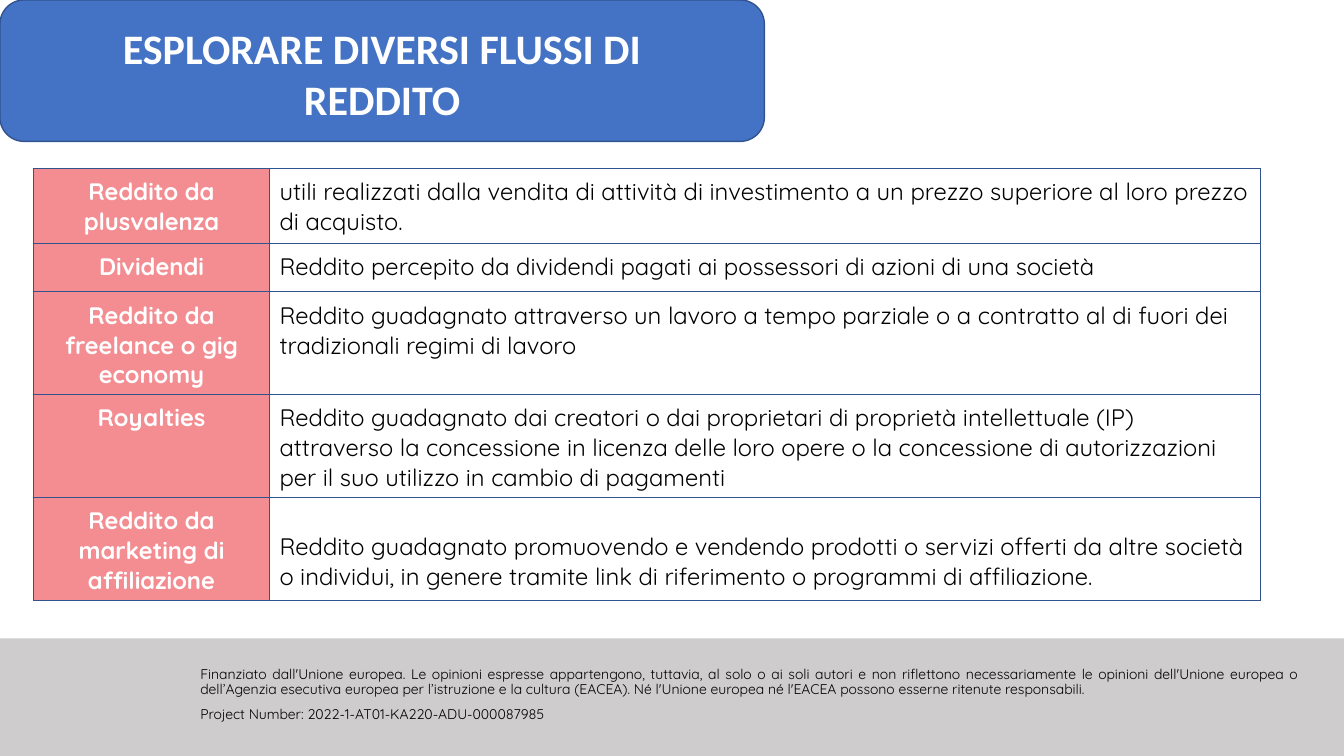
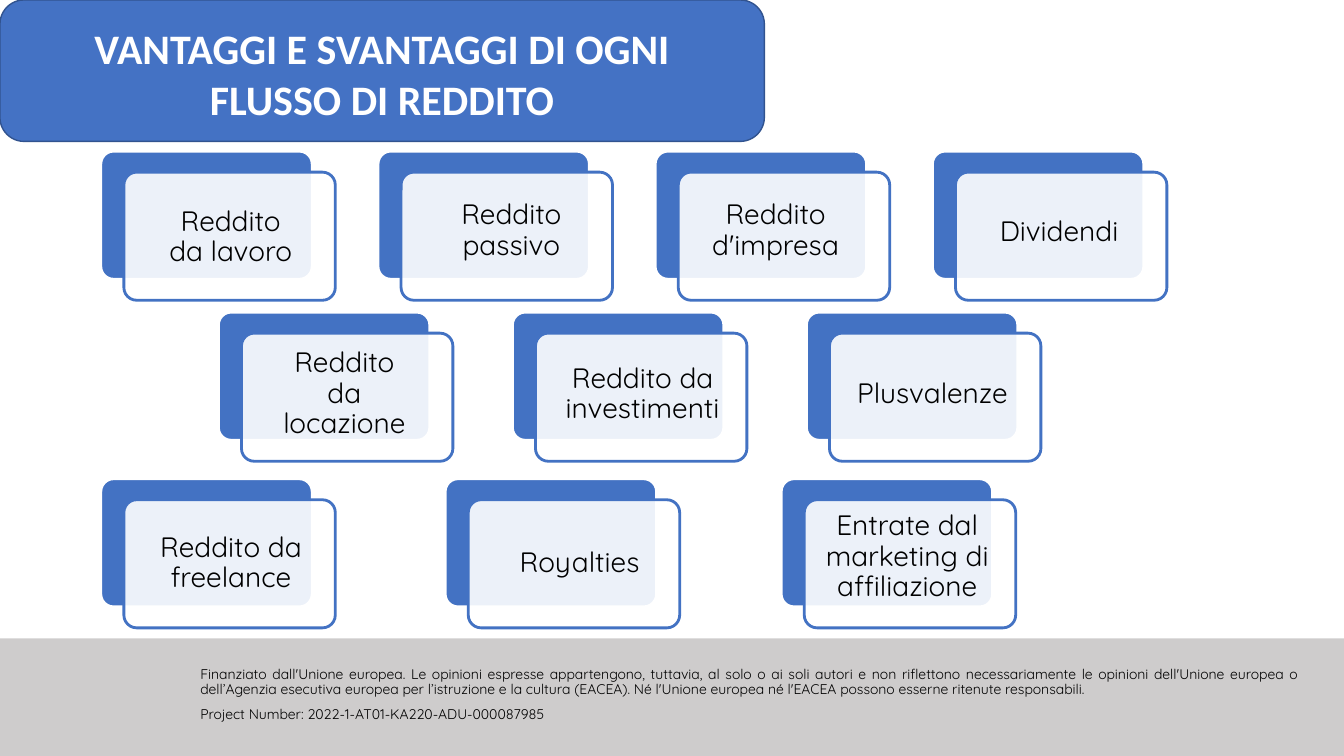
from dataclasses import dataclass

from lxml.etree import SubElement
from pptx import Presentation
from pptx.dml.color import RGBColor
from pptx.enum.shapes import MSO_SHAPE
from pptx.enum.text import MSO_ANCHOR, PP_ALIGN
from pptx.oxml.ns import qn
from pptx.util import Pt


@dataclass(frozen=True)
class Theme:
    banner: str = "4472C4"
    outline: str = "31538F"
    card: str = "4372C3"
    label: str = "F38D92"
    band: str = "AEABAB"
    white: str = "FFFFFF"
    black: str = "000000"
    title_font: str = "Calibri"
    body_font: str = "Quicksand"
    title_size: float = 30
    card_size: float = 20
    table_size: float = 17
    footer_size: float = 10


THEME = Theme()
SLIDE_WIDTH, SLIDE_HEIGHT = 960, 540
BANNER_BOX = (0, 0, 546, 101)
FOOTER_BOX = (0, 456, SLIDE_WIDTH, 84)
TABLE_BOX = (24, 120, 876.5, 316)
CARD_WIDTH, CARD_HEIGHT = 151, 91.5
CARD_SHIFT = (16.5, 15)

FOOTER_TEXTS = [
    "Finanziato dall'Unione europea. Le opinioni espresse appartengono, tuttavia, "
    "al solo o ai soli autori e non riflettono necessariamente le opinioni "
    "dell'Unione europea o dell’Agenzia esecutiva europea per l’istruzione e la "
    "cultura (EACEA). Né l'Unione europea né l'EACEA possono esserne ritenute "
    "responsabili.",
    "Project Number: 2022-1-AT01-KA220-ADU-000087985",
]

# Income type, description, row height
INCOME_ROWS = [
    ("Reddito da plusvalenza",
     "utili realizzati dalla vendita di attività di investimento a un prezzo "
     "superiore al loro prezzo di acquisto.", 54),
    ("Dividendi",
     "Reddito percepito da dividendi pagati ai possessori di azioni di una società",
     34.5),
    ("Reddito da freelance o gig economy",
     "Reddito guadagnato attraverso un lavoro a tempo parziale o a contratto al di "
     "fuori dei tradizionali regimi di lavoro", 73.5),
    ("Royalties",
     "Reddito guadagnato dai creatori o dai proprietari di proprietà intellettuale "
     "(IP) attraverso la concessione in licenza delle loro opere o la concessione "
     "di autorizzazioni per il suo utilizzo in cambio di pagamenti", 70),
    ("Reddito da marketing di affiliazione",
     "Reddito guadagnato promuovendo e vendendo prodotti o servizi offerti da altre "
     "società o individui, in genere tramite link di riferimento o programmi di "
     "affiliazione.", 73.5),
]

# Row top, card lefts, then each card's text and its box within the card
CARD_ROWS = [
    (108, [72, 270, 468, 666], [
        ("Reddito da lavoro", (42, 30, 101.5, 63)),
        ("Reddito passivo", (42, 24, 106.5, 66)),
        ("Reddito d'impresa", (30, 24, 112, 66)),
        ("Dividendi", (36, 24, 109, 68)),
    ]),
    (223, [156, 366, 576], [
        ("Reddito da locazione", (36, 30, 108, 57)),
        ("Reddito da investimenti", (30, 30, 126, 57)),
        ("Plusvalenze", (30, 30, 120, 57)),
    ]),
    (342, [72, 318, 558], [
        ("Reddito da freelance", (36, 36, 114, 49)),
        ("Royalties", (42, 36, 108, 49)),
        ("Entrate dal marketing di affiliazione", (24, 30, 132, 52)),
    ]),
]


def points(*lengths):
    return [Pt(length) for length in lengths]


def apply(target, formats):
    for name, value in formats.items():
        setattr(target, name, value)


def set_margins(target, left, top, right, bottom):
    names = ("margin_left", "margin_top", "margin_right", "margin_bottom")
    apply(target, dict(zip(names, points(left, top, right, bottom))))


def write(paragraph, text, size, color, font=THEME.body_font, bold=False, **formats):
    paragraph.text = text
    apply(paragraph, formats)
    apply(paragraph.font, {"name": font, "size": Pt(size), "bold": bold})
    paragraph.font.color.rgb = RGBColor.from_string(color)


def add_panel(slide, kind, box, fill, line=None, width=1, opacity=100, radius=None):
    shape = slide.shapes.add_shape(kind, *points(*box))
    shape.shadow.inherit = False
    shape.fill.solid()
    shape.fill.fore_color.rgb = RGBColor.from_string(fill)
    if opacity < 100:
        color = shape.fill._xPr.find(qn("a:solidFill"))[0]
        SubElement(color, qn("a:alpha"), val=str(opacity * 1000))
    if line:
        shape.line.color.rgb = RGBColor.from_string(line)
        shape.line.width = Pt(width)
    else:
        shape.line.fill.background()
    if radius is not None:
        shape.adjustments[0] = radius
    return shape


def add_text_frame(slide, box, **formats):
    frame = slide.shapes.add_textbox(*points(*box)).text_frame
    apply(frame, {"word_wrap": True, **formats})
    return frame


def add_banner(slide, box, title):
    banner = add_panel(slide, MSO_SHAPE.ROUNDED_RECTANGLE, box, THEME.banner,
                       THEME.outline, radius=0.17)
    frame = banner.text_frame
    apply(frame, {"word_wrap": True, "vertical_anchor": MSO_ANCHOR.MIDDLE})
    set_margins(frame, 25, 3.6, 25, 0)
    write(frame.paragraphs[0], title, THEME.title_size, THEME.white,
          THEME.title_font, True, alignment=PP_ALIGN.CENTER)


def add_footer(slide, box):
    left, top, width, height = box
    add_panel(slide, MSO_SHAPE.RECTANGLE, box, THEME.band, opacity=60)
    frame = add_text_frame(slide, (left + 136, top + 17, width - 162, height - 25))
    spacings = [{"line_spacing": 0.9, "space_after": Pt(6)}, {}]
    for index, (text, spacing) in enumerate(zip(FOOTER_TEXTS, spacings)):
        paragraph = frame.add_paragraph() if index else frame.paragraphs[0]
        write(paragraph, text, THEME.footer_size, THEME.black,
              alignment=PP_ALIGN.JUSTIFY, **spacing)


def add_slide(presentation, title):
    slide = presentation.slides.add_slide(presentation.slide_layouts[6])
    add_footer(slide, FOOTER_BOX)
    add_banner(slide, BANNER_BOX, title)
    return slide


def set_borders(cell, color, width):
    properties = cell._tc.get_or_add_tcPr()
    for index, side in enumerate(("lnL", "lnR", "lnT", "lnB")):
        line = properties.makeelement(qn(f"a:{side}"), {"w": str(Pt(width))})
        fill = SubElement(line, qn("a:solidFill"))
        SubElement(fill, qn("a:srgbClr"), val=color)
        properties.insert(index, line)


def add_income_table(slide, box):
    table = slide.shapes.add_table(len(INCOME_ROWS), 2, *points(*box)).table
    apply(table, {"first_row": False, "horz_banding": False})
    label_width = 168.5
    for column, width in zip(table.columns, (label_width, box[2] - label_width)):
        column.width = Pt(width)

    for row_index, (label, description, height) in enumerate(INCOME_ROWS):
        table.rows[row_index].height = Pt(height)
        label_cell, description_cell = table.rows[row_index].cells
        label_cell.fill.solid()
        label_cell.fill.fore_color.rgb = RGBColor.from_string(THEME.label)
        description_cell.fill.background()
        for cell in (label_cell, description_cell):
            set_margins(cell, 7.2, 6, 7.2, 6)
            set_borders(cell, THEME.outline, 0.75)
        write(label_cell.text_frame.paragraphs[0], label, THEME.table_size,
              THEME.white, bold=True, alignment=PP_ALIGN.CENTER)
        write(description_cell.text_frame.paragraphs[0], description,
              THEME.table_size, THEME.black)
    # The last description sits at the foot of its row
    description_cell.vertical_anchor = MSO_ANCHOR.BOTTOM


def add_card(slide, left, top, text, text_box):
    shift_x, shift_y = CARD_SHIFT
    size = (CARD_WIDTH, CARD_HEIGHT)
    add_panel(slide, MSO_SHAPE.ROUNDED_RECTANGLE, (left, top, *size),
              THEME.card, THEME.white, 2, radius=0.1)
    add_panel(slide, MSO_SHAPE.ROUNDED_RECTANGLE, (left + shift_x, top + shift_y, *size),
              THEME.white, THEME.card, 2, opacity=90, radius=0.1)
    text_left, text_top, width, height = text_box
    frame = add_text_frame(slide, (left + text_left, top + text_top, width, height),
                           vertical_anchor=MSO_ANCHOR.MIDDLE)
    set_margins(frame, 4.2, 4.2, 4.2, 4.2)
    write(frame.paragraphs[0], text, THEME.card_size, THEME.black,
          alignment=PP_ALIGN.CENTER, line_spacing=0.9)


def build_table_slide(presentation):
    slide = add_slide(presentation, "ESPLORARE DIVERSI FLUSSI DI REDDITO")
    add_income_table(slide, TABLE_BOX)


def build_card_slide(presentation):
    slide = add_slide(presentation, "VANTAGGI E SVANTAGGI DI OGNI FLUSSO DI REDDITO")
    for top, lefts, cards in CARD_ROWS:
        for left, (text, text_box) in zip(lefts, cards):
            add_card(slide, left, top, text, text_box)


def main():
    presentation = Presentation()
    apply(presentation, {"slide_width": Pt(SLIDE_WIDTH), "slide_height": Pt(SLIDE_HEIGHT)})
    build_table_slide(presentation)
    build_card_slide(presentation)
    presentation.save("out.pptx")


if __name__ == "__main__":
    main()
